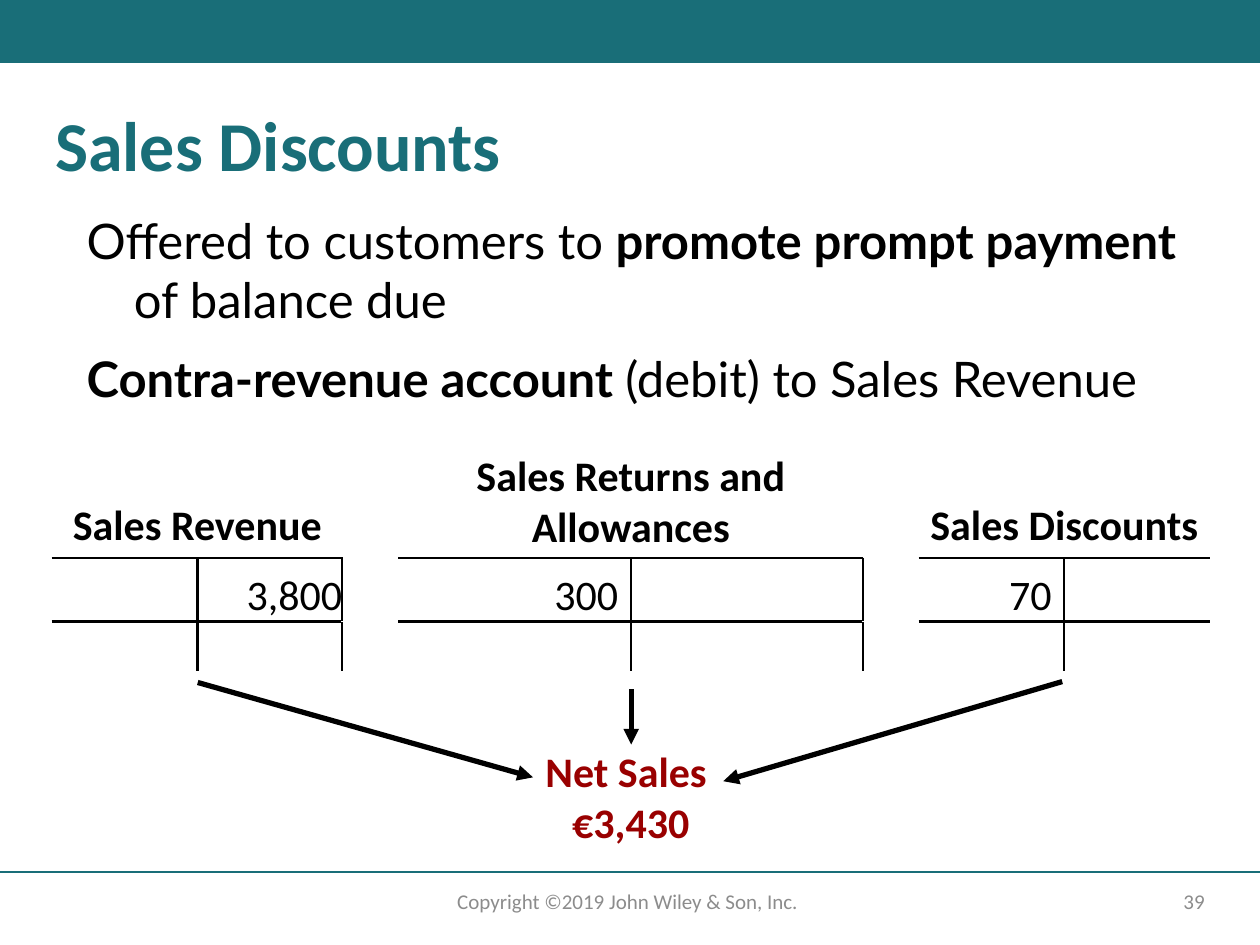
"""Build the Sales Discounts slide with three T-accounts leading to net sales."""
import lxml.etree
import pptx
import pptx.dml.color
import pptx.enum.shapes
import pptx.enum.text
import pptx.oxml
import pptx.oxml.ns
import pptx.util

Pt = pptx.util.Pt
ALIGN = pptx.enum.text.PP_ALIGN
ANCHOR = pptx.enum.text.MSO_ANCHOR
TEAL = pptx.dml.color.RGBColor(0x19, 0x6E, 0x78)
BLACK = pptx.dml.color.RGBColor(0, 0, 0)
GRAY = pptx.dml.color.RGBColor(0x8C, 0x8C, 0x8C)
RED = pptx.dml.color.RGBColor(0x99, 0, 0)

TITLE = {"name": "Calibri", "size": Pt(40), "bold": True, "color": TEAL}
BODY = {"name": "Lato", "size": Pt(28), "bold": False, "color": BLACK}
BODY_BOLD = {**BODY, "bold": True}
FOOTER = {"name": "Calibri", "size": Pt(12), "bold": False, "color": GRAY}
AMOUNT = {"name": "Calibri", "size": Pt(24), "bold": False, "color": BLACK}
HEADING = {**AMOUNT, "bold": True}
TOTAL = {**HEADING, "color": RED}

COLUMN_WIDTHS = [82.8, 82.8, 32.4, 132.5, 132.5, 32.4, 82.8, 82.8]
ROW_HEIGHTS = [57.6, 33.8, 26.6, 94.3]
ACCOUNTS = [
    (0, ["Sales Revenue"], 1, "3,800", 0),
    (3, ["Sales Returns and", "Allowances"], 0, "300", 7.2),
    (6, ["Sales Discounts"], 0, "70", 7.2),
]


def write_paragraphs(frame, paragraphs, layout):
    """Fill a text frame with paragraphs, each a list of (text, format) runs."""
    for index, runs in enumerate(paragraphs):
        paragraph = frame.add_paragraph() if index else frame.paragraphs[0]
        for name, value in layout.items():
            if index or name != "space_before":
                setattr(paragraph, name, value)
        for text, style in runs:
            run = paragraph.add_run()
            run.text = text
            for name, value in style.items():
                if name == "color":
                    run.font.color.rgb = value
                else:
                    setattr(run.font, name, value)


def add_text(slide, box, paragraphs, layout, anchor=ANCHOR.TOP):
    """Add a wrapping text box and return its text frame."""
    frame = slide.shapes.add_textbox(*map(Pt, box)).text_frame
    frame.word_wrap = True
    frame.vertical_anchor = anchor
    write_paragraphs(frame, paragraphs, layout)
    return frame


def add_band(slide):
    """Add the coloured band across the top."""
    shape = slide.shapes.add_shape(
        pptx.enum.shapes.MSO_SHAPE.RECTANGLE, Pt(0), Pt(0), Pt(720), Pt(36))
    shape.shadow.inherit = False
    shape.fill.solid()
    shape.fill.fore_color.rgb = TEAL
    shape.line.fill.background()


def add_line(slide, ends, color, width, arrow=False):
    """Add a straight line, with an arrowhead at its end if asked."""
    connector = slide.shapes.add_connector(
        pptx.enum.shapes.MSO_CONNECTOR.STRAIGHT, *map(Pt, ends))
    connector.line.color.rgb = color
    connector.line.width = Pt(width)
    properties = connector._element.spPr
    lxml.etree.SubElement(properties, pptx.oxml.ns.qn("a:effectLst"))
    if arrow:
        lxml.etree.SubElement(
            connector.line._get_or_add_ln(), pptx.oxml.ns.qn("a:tailEnd"), type="triangle")


def set_borders(cell, sides):
    """Draw black borders on the given sides, named in L, R, T, B order."""
    properties = cell._tc.get_or_add_tcPr()
    for side in sides:
        properties.append(pptx.oxml.parse_xml(
            f'<a:ln{side} {pptx.oxml.ns.nsdecls("a")} w="{Pt(1.5)}">'
            f'<a:solidFill><a:srgbClr val="{BLACK}"/></a:solidFill></a:ln{side}>'))


def write_cell(cell, lines, style, alignment, margins):
    """Write lines of text at the bottom of a table cell."""
    cell.vertical_anchor = ANCHOR.BOTTOM
    sides = ("margin_left", "margin_top", "margin_right", "margin_bottom")
    for name, value in zip(sides, margins):
        setattr(cell, name, Pt(value))
    write_paragraphs(
        cell.text_frame, [[(line, style)] for line in lines], {"alignment": alignment})


def add_account(table, column, heading, side, amount, right_margin):
    """Lay out one T-account in two neighbouring columns."""
    table.cell(0, column).merge(table.cell(0, column + 1))
    write_cell(table.cell(0, column), heading, HEADING, ALIGN.CENTER, (0, 0, 0, 3.6))
    write_cell(table.cell(1, column + side), [amount], AMOUNT, ALIGN.RIGHT,
               (0, 7.2, right_margin, 0))
    for offset, stem in enumerate("RL"):
        set_borders(table.cell(0, column + offset), "B")
        set_borders(table.cell(1, column + offset), stem + "T")
        set_borders(table.cell(2, column + offset), stem)


def add_accounts_table(slide):
    """Add the table of T-accounts and the net sales total."""
    table = slide.shapes.add_table(
        len(ROW_HEIGHTS), len(COLUMN_WIDTHS), Pt(30), Pt(257.8),
        Pt(sum(COLUMN_WIDTHS)), Pt(sum(ROW_HEIGHTS))).table
    table.first_row = False
    table.horz_banding = False
    for column, width in zip(table.columns, COLUMN_WIDTHS):
        column.width = Pt(width)
    for row, height in zip(table.rows, ROW_HEIGHTS):
        row.height = Pt(height)
    for account in ACCOUNTS:
        add_account(table, *account)
    table.cell(3, 3).merge(table.cell(3, 4))
    write_cell(table.cell(3, 3), ["Net Sales ", "€3,430"], TOTAL, ALIGN.CENTER,
               (0, 43.2, 0, 0))
    for cell in table.iter_cells():
        cell.fill.background()


def main():
    """Build and save the presentation."""
    presentation = pptx.Presentation()
    presentation.slide_width, presentation.slide_height = Pt(720), Pt(540)
    slide = presentation.slides.add_slide(presentation.slide_layouts[6])
    add_band(slide)
    add_line(slide, (0, 498.2, 720, 498.2), TEAL, 1)
    add_text(slide, (508.3, 500.4, 187.2, 28.8), [[("39", FOOTER)]],
             {"alignment": ALIGN.RIGHT}, ANCHOR.MIDDLE)
    add_text(slide, (238.3, 500.4, 243.4, 28.8),
             [[("Copyright ©2019 John Wiley & Son, Inc. ", FOOTER)]],
             {"alignment": ALIGN.CENTER}, ANCHOR.MIDDLE)
    body = add_text(slide, (24.5, 116.6, 659.5, 128.9), [
        [("Offered to customers to ", BODY), ("promote prompt payment ", BODY_BOLD),
         ("of balance due", BODY)],
        [("Contra-revenue account", BODY_BOLD), (" (debit) to Sales Revenue", BODY)],
    ], {"space_before": Pt(12)})
    for paragraph in body.paragraphs:
        properties = paragraph._p.get_or_add_pPr()
        properties.set("marL", str(Pt(45)))
        properties.set("indent", str(Pt(-27)))
    add_text(slide, (24.5, 59.8, 683.3, 51.1), [[("Sales Discounts", TITLE)]],
             {"line_spacing": 0.9})
    add_accounts_table(slide)
    for ends in ((113, 390, 304.6, 444.2), (607, 389.5, 413.3, 446.4),
                 (360.7, 393.8, 360.7, 425.5)):
        add_line(slide, ends, BLACK, 3, arrow=True)
    presentation.save("out.pptx")


if __name__ == "__main__":
    main()
